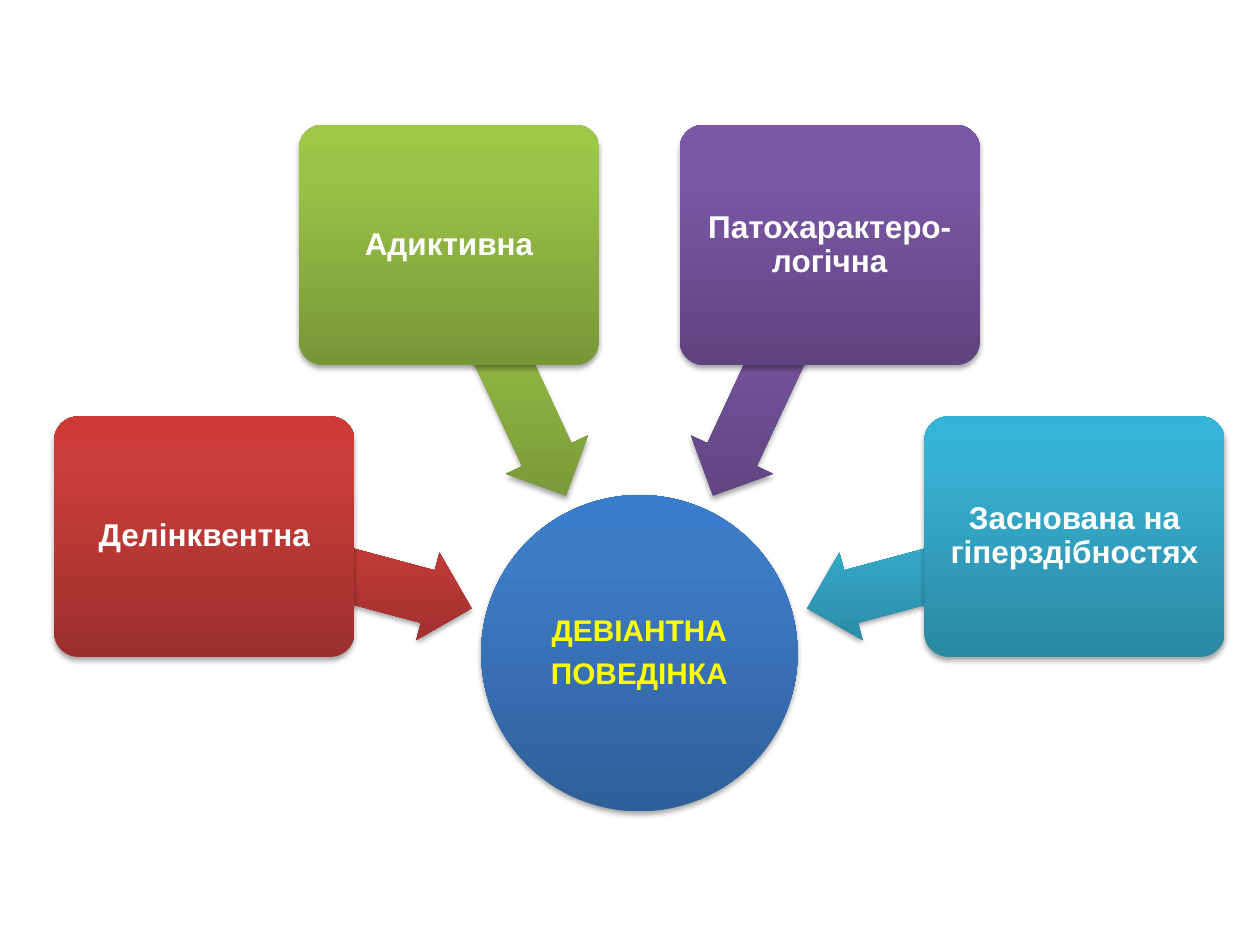
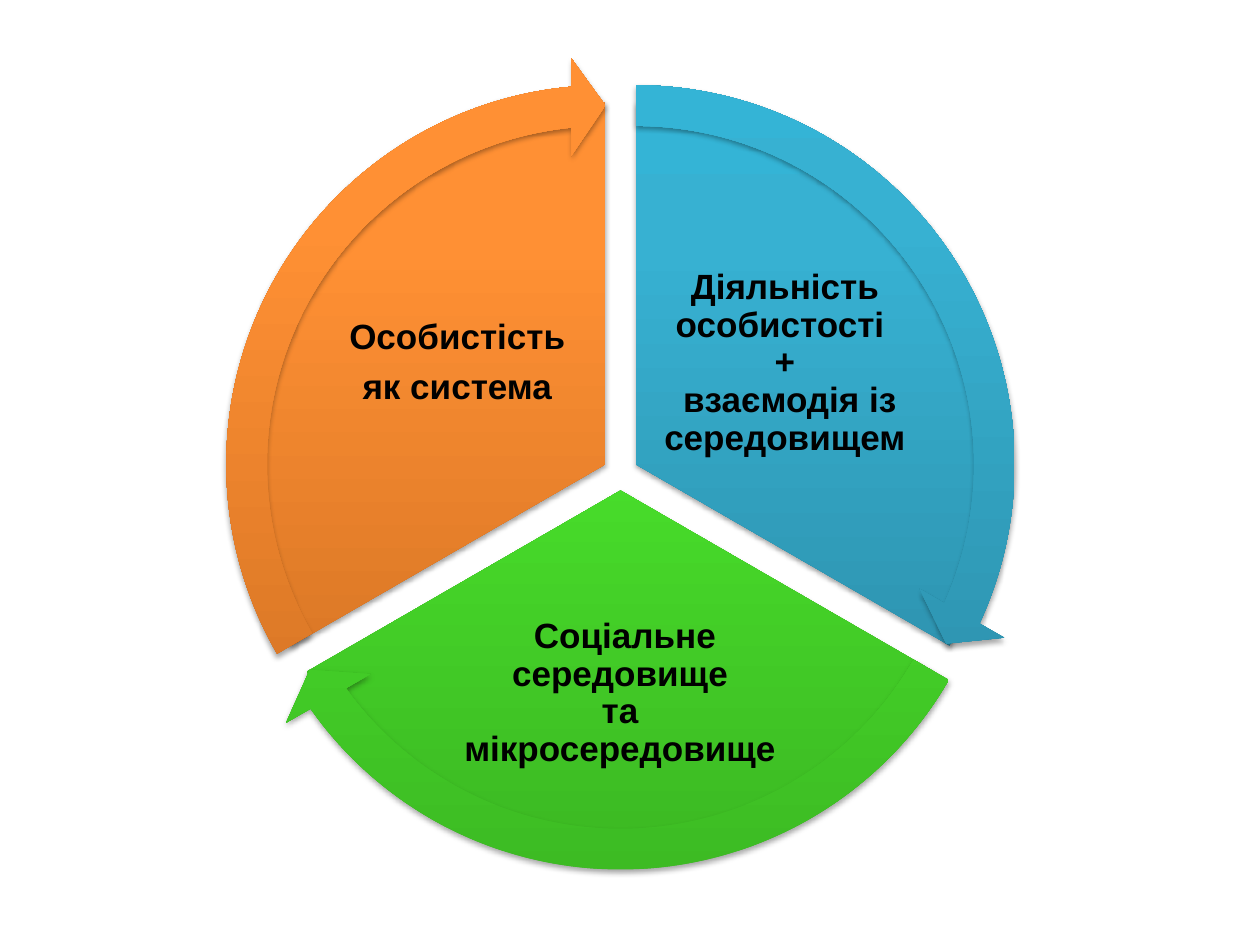
from dataclasses import dataclass
from math import cos, radians, sin

from lxml.etree import SubElement
from pptx import Presentation
from pptx.dml.color import RGBColor
from pptx.enum.shapes import MSO_SHAPE
from pptx.enum.text import MSO_ANCHOR, PP_ALIGN
from pptx.oxml import parse_xml
from pptx.oxml.ns import nsdecls, qn
from pptx.util import Pt

FONT = "Arial"
INK = {"white": "FFFFFF", "yellow": "FFFF00", "black": "000000"}
TONES = {
    "blue": "2F5F99 3D7CC7 3A7CCB",
    "red": "9C2F2D CB3E3A CE3B37",
    "lime": "779737 9BC348 9DC746",
    "violet": "5F4480 7B58A6 7C57A8",
    "aqua": "2A88A2 37B1D2 34B4D6",
    "green": "3CB923 4EF02E 4CF52A",
    "orange": "CC6E20 FF9034 FF9136",
}
STOPS = (0, 80000, 100000)
TURN = 216
THIRD = TURN / 3


@dataclass(frozen=True)
class Box:
    left: float
    top: float
    width: float
    height: float


@dataclass(frozen=True)
class Label:
    lines: tuple[str, ...]
    size: float
    ink: str
    inset: float
    after: float = 0


@dataclass(frozen=True)
class Kind:
    text: str
    tone: str


@dataclass(frozen=True)
class Part:
    lines: tuple[str, ...]
    tone: str
    box: Box
    after: float = 0


KINDS = (
    Kind("Делінквентна", "red"),
    Kind("Адиктивна", "lime"),
    Kind("Патохарактеро-логічна", "violet"),
    Kind("Заснована на гіперздібностях", "aqua"),
)
PARTS = (
    Part(("Діяльність особистості ", "+", " взаємодія із середовищем"),
         "aqua", Box(374.4, 146.2, 148.3, 123.1)),
    Part(("Соціальне середовище ", "та ", "мікросередовище "),
         "green", Box(246.2, 342, 221.8, 108.7)),
    Part(("Особистість", "як система"),
         "orange", Box(187.2, 146.2, 148.3, 123.1), 7),
)


def around(mid: tuple[float, float], width: float, height: float) -> Box:
    return Box(mid[0] - width / 2, mid[1] - height / 2, width, height)


def polar(mid: tuple[float, float], reach: float, angle: float) -> tuple[float, float]:
    return (mid[0] + reach * cos(radians(angle)),
            mid[1] + reach * sin(radians(angle)))


def place(box: Box) -> tuple[Pt, ...]:
    return Pt(box.left), Pt(box.top), Pt(box.width), Pt(box.height)


def shade(shape, tone: str) -> None:
    shape.fill.background()
    shape.line.fill.background()
    shape.shadow.inherit = False
    props = shape._element.spPr
    grad = parse_xml(f'<a:gradFill {nsdecls("a")} rotWithShape="0"><a:gsLst/>'
                     '<a:lin ang="16200000" scaled="0"/></a:gradFill>')
    for stop, color in zip(STOPS, TONES[tone].split()):
        mark = SubElement(grad[0], qn("a:gs"), pos=str(stop))
        SubElement(mark, qn("a:srgbClr"), val=color)
    props.replace(props.find(qn("a:noFill")), grad)
    cast = SubElement(props.find(qn("a:effectLst")), qn("a:outerShdw"),
                      blurRad=str(Pt(3.1)), dist=str(Pt(1.8)),
                      dir="5400000", rotWithShape="0")
    color = SubElement(cast, qn("a:srgbClr"), val=INK["black"])
    SubElement(color, qn("a:alpha"), val="35000")


def draw(slide, form: MSO_SHAPE, box: Box, tone: str,
         adjust: tuple[float, ...] = (), turn: float = 0):
    shape = slide.shapes.add_shape(form, *place(box))
    for index, value in enumerate(adjust):
        shape.adjustments[index] = value
    shape.rotation = turn
    shade(shape, tone)
    return shape


def write(shape, label: Label) -> None:
    frame = shape.text_frame
    frame.word_wrap = True
    frame.vertical_anchor = MSO_ANCHOR.MIDDLE
    frame.margin_left = frame.margin_right = Pt(label.inset)
    frame.margin_top = frame.margin_bottom = Pt(label.inset)
    for index, line in enumerate(label.lines):
        para = frame.add_paragraph() if index else frame.paragraphs[0]
        para.alignment = PP_ALIGN.CENTER
        para.line_spacing = 0.9
        para.space_after = Pt(label.after)
        run = para.add_run()
        run.text = line
        run.font.name = FONT
        run.font.size = Pt(label.size)
        run.font.bold = True
        run.font.color.rgb = RGBColor.from_string(INK[label.ink])


def draw_kinds(slide) -> None:
    mid = (365.4, 373.3)
    hub = draw(slide, MSO_SHAPE.OVAL, around(mid, 180.8, 180.8), "blue")
    write(hub, Label(("ДЕВІАНТНА", "ПОВЕДІНКА"), 17, "yellow", 0.7, 6))
    for index, kind in enumerate(KINDS):
        angle = 195 + 50 * index
        draw(slide, MSO_SHAPE.LEFT_ARROW, around(polar(mid, 178.2, angle), 157.7, 51.8),
             kind.tone, (0.6, 0.5), angle)
        card = draw(slide, MSO_SHAPE.ROUNDED_RECTANGLE,
                    around(polar(mid, 257.4, angle), 171.6, 137.4), kind.tone, (0.1,))
        write(card, Label((kind.text,), 18, "white", 2.9, 6))


def draw_wheel(slide) -> None:
    mid = (354.6, 270.3)
    hubs = [polar(mid, 10, 120 * index - 30) for index in range(len(PARTS))]
    starts = [(162 + THIRD * index) % TURN for index in range(len(PARTS))]
    for part, hub, start in zip(PARTS, hubs, starts):
        draw(slide, MSO_SHAPE.PIE, around(hub, 414, 414), part.tone,
             (start, (start + THIRD) % TURN))
        text = slide.shapes.add_textbox(*place(part.box))
        write(text, Label(part.lines, 20, "black", 2.2, part.after))
    for index, (part, hub) in enumerate(zip(PARTS, hubs)):
        draw(slide, MSO_SHAPE.CIRCULAR_ARROW, around(hub, 465.8, 465.8), part.tone,
             (0.05, 3.28, 14.73 + THIRD * index, starts[index], 0.06))


def main() -> None:
    deck = Presentation()
    deck.slide_width, deck.slide_height = Pt(720), Pt(540)
    for fill in (draw_kinds, draw_wheel):
        fill(deck.slides.add_slide(deck.slide_layouts[6]))
    deck.save("out.pptx")


if __name__ == "__main__":
    main()
